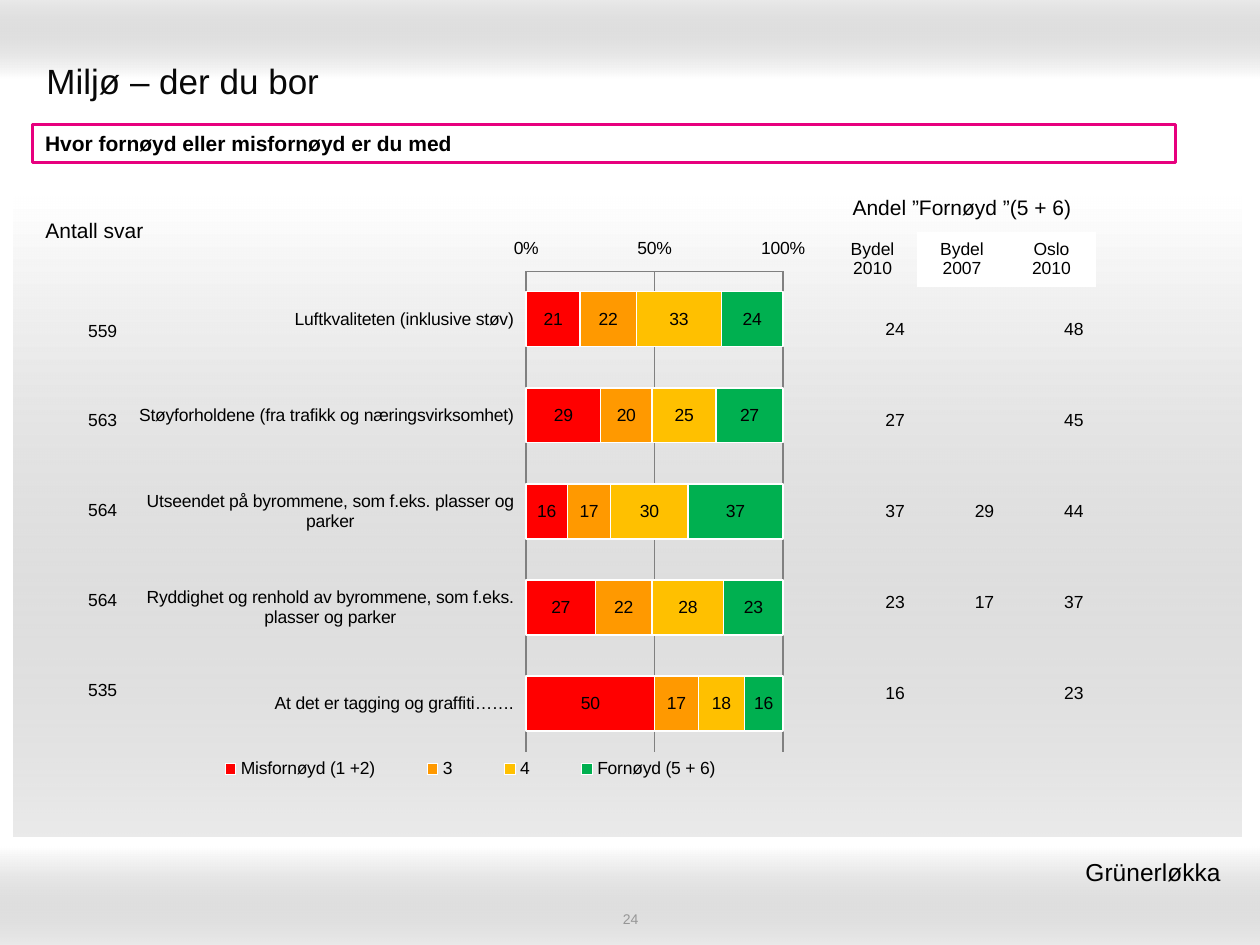
from lxml.etree import SubElement
from pptx import Presentation
from pptx.chart.data import CategoryChartData
from pptx.dml.color import RGBColor
from pptx.enum.chart import XL_CHART_TYPE, XL_LEGEND_POSITION, XL_TICK_LABEL_POSITION, XL_TICK_MARK
from pptx.enum.shapes import MSO_SHAPE
from pptx.enum.text import MSO_ANCHOR, PP_ALIGN
from pptx.oxml.ns import qn
from pptx.util import Inches, Pt

HUES = {name: RGBColor.from_string(code) for name, code in {
    "white": "FFFFFF", "black": "000000", "ink": "080808", "gray": "999999",
    "pale": "969696", "grid": "808080", "pink": "E7007E", "red": "FF0000",
    "orange": "FF9900", "gold": "FFC000", "green": "00B050"}.items()}
FONT = "Arial"
PLAIN = "{2D5ABB26-0587-4C30-8999-92F81FD0307C}"  # no style, no grid

deck = Presentation()
deck.slide_width, deck.slide_height = Inches(10), Inches(7.5)
slide = deck.slides.add_slide(deck.slide_layouts[6])
shapes = slide.shapes
unit = deck.slide_width / 100  # grid of 100 columns and 75 rows


def spot(*cells):
    return [round(cell * unit) for cell in cells]


def write(frame, text, size, hue="black", align=PP_ALIGN.LEFT, bold=False):
    frame.text = text
    for par in frame.paragraphs:
        par.alignment = align
        font = par.font
        font.name, font.size, font.bold = FONT, Pt(size), bold
        font.color.rgb = HUES[hue]


# Shaded bands: top, bottom and middle
for place, angle in [((0, 0, 100, 6.2), 90), ((0, 67.2, 100, 7.8), 270),
                     ((1.1, 15.6, 97.4, 50.8), 270)]:
    band = shapes.add_shape(MSO_SHAPE.RECTANGLE, *spot(*place))
    band.shadow.inherit = False
    band.line.fill.background()
    band.fill.gradient()
    band.fill.gradient_angle = angle
    for stop, hue in zip(band.fill.gradient_stops, ("white", "gray")):
        stop.color.rgb = HUES[hue]
    tints = list(band.element.iter(qn("a:srgbClr")))
    SubElement(tints[1], qn("a:alpha")).set("val", "20000")

# Title, page number and district
for place, text, size, hue, align, anchor in [
        ((2.7, 3.6, 94.5, 5.5), "Miljø – der du bor", 20, "ink", PP_ALIGN.LEFT, MSO_ANCHOR.MIDDLE),
        ((34.2, 72.2, 31.7, 1.4), "24", 8, "pale", PP_ALIGN.CENTER, MSO_ANCHOR.MIDDLE),
        ((61, 67.5, 37.4, 3.4), "Grünerløkka ", 14, "black", PP_ALIGN.RIGHT, MSO_ANCHOR.TOP)]:
    frame = shapes.add_textbox(*spot(*place)).text_frame
    frame.word_wrap = True
    frame.vertical_anchor = anchor
    write(frame, text, size, hue, align)

# Question box
box = shapes.add_shape(MSO_SHAPE.RECTANGLE, *spot(2.6, 9.9, 90.7, 3))
box.shadow.inherit = False
box.fill.solid()
box.fill.fore_color.rgb = HUES["white"]
box.line.color.rgb = HUES["pink"]
box.line.width = Pt(2)
box.text_frame.vertical_anchor = MSO_ANCHOR.TOP
write(box.text_frame, "Hvor fornøyd eller misfornøyd er du med", 12, bold=True)

# Stacked bars
data = CategoryChartData(number_format="0")
data.categories = [
    "Luftkvaliteten (inklusive støv)",
    "Støyforholdene (fra trafikk og næringsvirksomhet)",
    "Utseendet på byrommene, som f.eks. plasser og parker",
    "Ryddighet og renhold av byrommene, som f.eks. plasser og parker",
    "At det er tagging og graffiti……."]
data.add_series("Misfornøyd (1 +2)", (21, 29, 16, 27, 50))
data.add_series("3", (22, 20, 17, 22, 17))
data.add_series("4", (33, 25, 30, 28, 18))
data.add_series("Fornøyd (5 + 6)", (24, 27, 37, 23, 16))
chart = shapes.add_chart(XL_CHART_TYPE.BAR_STACKED, *spot(9.8, 17.9, 55.1, 45.4), data).chart
chart.font.name, chart.font.size = FONT, Pt(10)
chart.font.color.rgb = HUES["black"]
chart.has_title = False

plot = chart.plots[0]
plot.gap_width, plot.overlap = 75, 100
plot.vary_by_categories = False
plot.has_data_labels = True
plot.data_labels.show_value = True
plot.data_labels.number_format = "0"
plot.data_labels.number_format_is_linked = False
for series, hue in zip(plot.series, ("red", "orange", "gold", "green")):
    series.format.fill.solid()
    series.format.fill.fore_color.rgb = HUES[hue]
    series.format.line.color.rgb = HUES["white"]
    series.format.line.width = Pt(0.75)

cats, vals = chart.category_axis, chart.value_axis
cats.reverse_order = True
cats.major_tick_mark = XL_TICK_MARK.NONE
cats.format.line.fill.background()
vals.minimum_scale, vals.maximum_scale, vals.major_unit = 0, 100, 50
vals.major_tick_mark = XL_TICK_MARK.INSIDE
vals.tick_labels.number_format = "General\\%"
vals.tick_labels.number_format_is_linked = False
vals.has_major_gridlines = True
for line in (vals.format.line, vals.major_gridlines.format.line):
    line.color.rgb = HUES["grid"]
    line.width = Pt(0.75)
for axis in (cats, vals):
    axis.tick_label_position = XL_TICK_LABEL_POSITION.LOW

chart.has_legend = True
chart.legend.position = XL_LEGEND_POSITION.BOTTOM
chart.legend.include_in_layout = False

# Fixed places for plot and legend, as shares of the chart
for tag, index, kind, place in [("c:plotArea", 0, "inner", (0.58, 0.08, 0.37, 0.84)),
                                ("c:legend", 1, None, (0.08, 0.92, 0.84, 0.06))]:
    node = next(chart.element.iter(qn(tag)))
    for old in node.findall(qn("c:layout")):
        node.remove(old)
    layout = SubElement(node, qn("c:layout"))
    node.insert(index, layout)
    manual = SubElement(layout, qn("c:manualLayout"))
    if kind:
        SubElement(manual, qn("c:layoutTarget")).set("val", kind)
    for key in ("xMode", "yMode"):
        SubElement(manual, qn("c:" + key)).set("val", "edge")
    for key, share in zip("xywh", place):
        SubElement(manual, qn("c:" + key)).set("val", str(share))

# Tables: shares, their heads, counts and the count head
shares = [("24", "", "48"), ("27", "", "45"), ("37", "29", "44"),
          ("23", "17", "37"), ("16", "", "23")]
heads = [("Andel ”Fornøyd ”(5 + 6)", "", ""), ("Bydel\n2010", "Bydel\n2007", "Oslo\n2010")]
counts = [("559",), ("563",), ("564",), ("564",), ("535",)]
for left, top, wide, highs, rows, sizes, align in [
        (65.7, 22.5, 7.1, [7.24] * 5, shares, [10] * 5, PP_ALIGN.RIGHT),
        (65.7, 14.7, 7.1, [3.7, 4.3], heads, [12, 10], PP_ALIGN.CENTER),
        (5.1, 22.7, 5.2, [7.14] * 5, counts, [10] * 5, PP_ALIGN.RIGHT),
        (0.4, 15.4, 14.2, [5.9], [("Antall svar",)], [12], PP_ALIGN.CENTER)]:
    span = len(rows[0])
    item = shapes.add_table(len(rows), span, *spot(left, top, wide * span, sum(highs)))
    next(item.element.iter(qn("a:tableStyleId"))).text = PLAIN
    table = item.table
    table.first_row = table.horz_banding = False
    for r, row in enumerate(rows):
        table.rows[r].height = spot(highs[r])[0]
        for c, text in enumerate(row):
            cell = table.cell(r, c)
            cell.vertical_anchor = MSO_ANCHOR.MIDDLE
            write(cell.text_frame, text, sizes[r], align=align)
            if rows is heads and r and c:
                cell.fill.solid()
                cell.fill.fore_color.rgb = HUES["white"]
            else:
                cell.fill.background()
    if rows is heads:
        table.cell(0, 0).merge(table.cell(0, span - 1))

deck.save("out.pptx")
